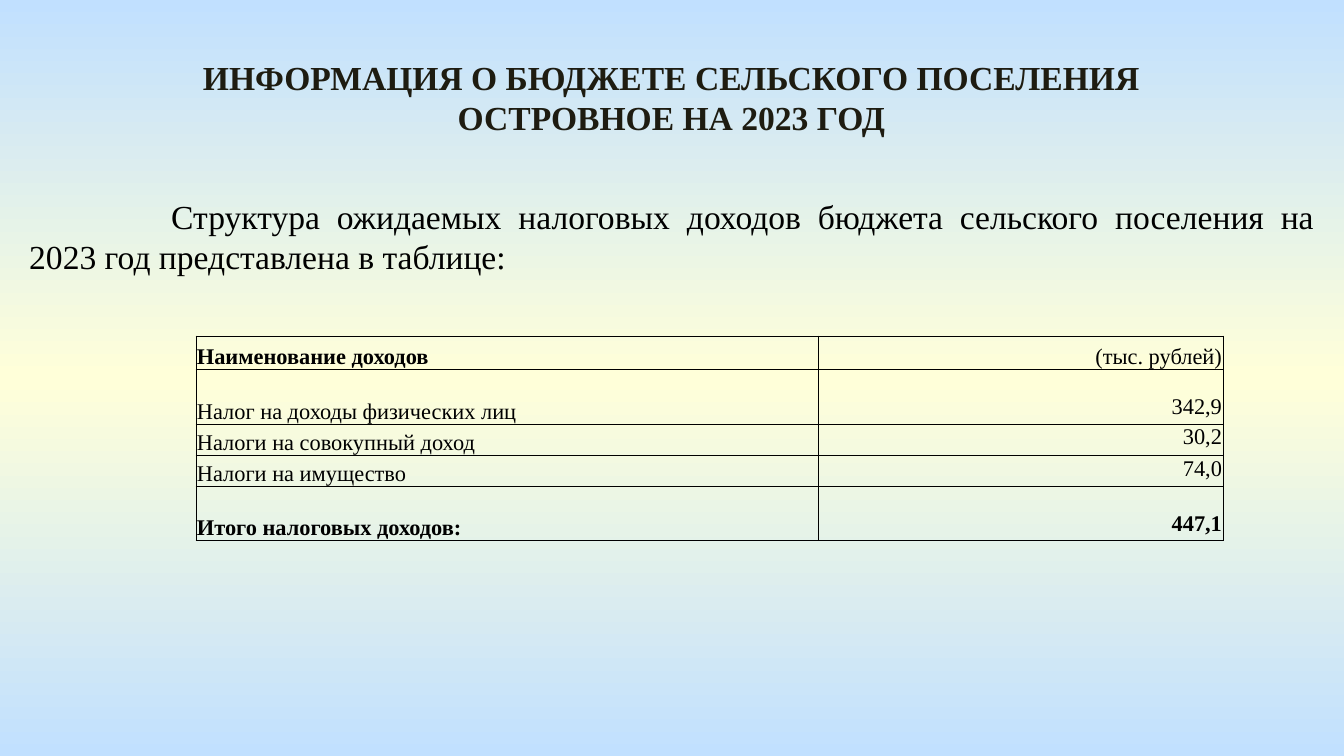
import copy

import pptx
import pptx.dml.color
import pptx.enum.text
import pptx.oxml
import pptx.oxml.ns
import pptx.util

PX = 914400 / 134.4
FONT = "Times New Roman"
COLORS = {"sky": "C1E0FF", "cream": "FFFFD9", "title": "1E1C11", "text": "000000"}
ALIGN = pptx.enum.text.PP_ALIGN
ANCHOR = pptx.enum.text.MSO_ANCHOR
qn = pptx.oxml.ns.qn


def px(length):
    return pptx.util.Emu(round(length * PX))


def write(frame, text, size, align, color="text", bold=False):
    frame.word_wrap = True
    frame.text = text
    paragraph = frame.paragraphs[0]
    paragraph.alignment = align
    font = paragraph.runs[0].font
    font.name = FONT
    font.size = pptx.util.Pt(size)
    font.bold = bold
    font.color.rgb = pptx.dml.color.RGBColor.from_string(COLORS[color])
    return paragraph


deck = pptx.Presentation()
deck.slide_width, deck.slide_height = px(1344), px(756)
slide = deck.slides.add_slide(deck.slide_layouts[6])

# Background: blue to cream and back, top to bottom
backdrop = slide.background.fill
backdrop.gradient()
backdrop.gradient_angle = 270
stop_list = next(slide.element.iter(qn("a:gsLst")))
stop_list.append(copy.deepcopy(stop_list[0]))
for stop, (position, color) in zip(
    backdrop.gradient_stops, [(0, "sky"), (0.5, "cream"), (1, "sky")]
):
    stop.position = position
    stop.color.rgb = pptx.dml.color.RGBColor.from_string(COLORS[color])

# Title
title = slide.shapes.add_textbox(px(152), px(50), px(1039), px(95))
write(title.text_frame, "ИНФОРМАЦИЯ О БЮДЖЕТЕ СЕЛЬСКОГО ПОСЕЛЕНИЯ ОСТРОВНОЕ НА 2023 ГОД",
      18, ALIGN.CENTER, "title", True)

# Introduction with a first-line indent
intro = slide.shapes.add_textbox(px(16), px(189), px(1312), px(95))
intro_line = write(
    intro.text_frame,
    "Структура ожидаемых налоговых доходов бюджета сельского поселения "
    "на 2023 год представлена в таблице:",
    18, ALIGN.JUSTIFY)
intro_properties = intro_line._p.get_or_add_pPr()
intro_properties.set("marL", "0")
intro_properties.set("indent", str(px(142)))

# Revenue table: name, amount, row height, space above amount, bold name, bold amount
revenues = [
    ("Наименование доходов", "(тыс. рублей)", 33, 1, True, False),
    ("Налог на доходы физических лиц", "342,9", 55, 26, False, False),
    ("Налоги на совокупный доход", "30,2", 32, 1, False, False),
    ("Налоги на имущество", "74,0", 31, 1, False, False),
    ("Итого налоговых доходов:", "447,1", 54, 25, True, True),
]
table = slide.shapes.add_table(len(revenues), 2, px(196), px(336), px(1027), px(205)).table
table.first_row = table.horz_banding = False
table.columns[0].width, table.columns[1].width = px(622), px(405)

for row, (name, amount, height, gap, bold_name, bold_amount) in enumerate(revenues):
    table.rows[row].height = px(height)
    entries = [(name, ALIGN.JUSTIFY, bold_name, 1), (amount, ALIGN.RIGHT, bold_amount, gap)]
    for column, (text, align, bold, top) in enumerate(entries):
        cell = table.cell(row, column)
        write(cell.text_frame, text, 12, align, bold=bold)
        cell.margin_left = cell.margin_right = px(1)
        cell.margin_top, cell.margin_bottom = px(top), 0
        at_bottom = row == 0 or column == 0
        cell.vertical_anchor = ANCHOR.BOTTOM if at_bottom else ANCHOR.TOP
        for side in ("lnL", "lnR", "lnT", "lnB"):
            cell._tc.get_or_add_tcPr().append(pptx.oxml.parse_xml(
                f'<a:{side} {pptx.oxml.ns.nsdecls("a")} w="{pptx.util.Pt(0.5)}"><a:solidFill>'
                f'<a:srgbClr val="{COLORS["text"]}"/></a:solidFill></a:{side}>'))
        cell.fill.background()

deck.save("out.pptx")
